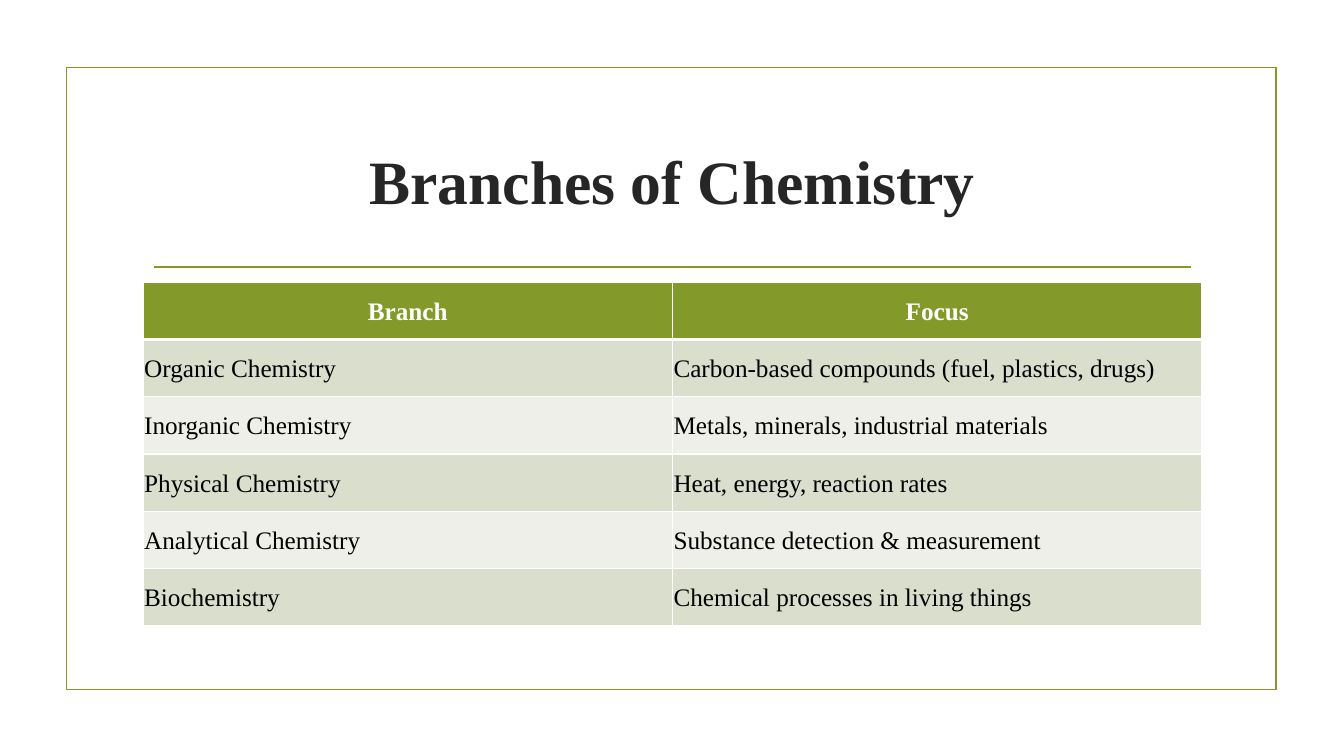
from lxml import etree
from pptx import Presentation
from pptx.dml.color import RGBColor
from pptx.enum.shapes import MSO_CONNECTOR, MSO_SHAPE
from pptx.enum.text import MSO_ANCHOR, PP_ALIGN
from pptx.oxml.ns import qn
from pptx.util import Inches, Pt

TITLE = "Branches of Chemistry"
BRANCHES = [
    ("Branch", "Focus"),
    ("Organic Chemistry", "Carbon-based compounds (fuel, plastics, drugs)"),
    ("Inorganic Chemistry", "Metals, minerals, industrial materials"),
    ("Physical Chemistry", "Heat, energy, reaction rates"),
    ("Analytical Chemistry", "Substance detection & measurement"),
    ("Biochemistry", "Chemical processes in living things"),
]
FONT = "Times New Roman"
GREEN, WHITE, BLACK, TITLE_GREY = "83992A", "FFFFFF", "000000", "262626"
BANDS = ("EDEFE8", "D9DECD")
LEFT, WIDTH = 1.42, 10.5
TABLE_TOP, TABLE_HEIGHT = 2.8, 3.41
CELL_MARGIN = Inches(0.01)


def rgb(hex_color):
    return RGBColor.from_string(hex_color)


def write(frame, text, size, color, bold, align):
    paragraph = frame.paragraphs[0]
    paragraph.alignment = align
    run = paragraph.add_run()
    run.text = text
    run.font.name = FONT
    run.font.size = Pt(size)
    run.font.bold = bold
    run.font.color.rgb = rgb(color)
    return paragraph


def outline(line):
    line.color.rgb = rgb(GREEN)
    line.width = Pt(1.25)


def add_borders(cell, widths):
    """Draw white cell borders; widths maps L, R, T, B (in that order) to points."""
    properties = cell._tc.get_or_add_tcPr()
    for side, width in widths.items():
        border = etree.SubElement(properties, qn(f"a:ln{side}"), w=str(Pt(width)))
        fill = etree.SubElement(border, qn("a:solidFill"))
        etree.SubElement(fill, qn("a:srgbClr"), val=WHITE)


prs = Presentation()
prs.slide_width, prs.slide_height = Inches(13.33), Inches(7.5)
slide = prs.slides.add_slide(prs.slide_layouts[6])
shapes = slide.shapes

frame = shapes.add_shape(MSO_SHAPE.RECTANGLE, Inches(0.66), Inches(0.67),
                         Inches(12), Inches(6.17))
frame.shadow.inherit = False
frame.fill.background()
outline(frame.line)

rule = shapes.add_connector(MSO_CONNECTOR.STRAIGHT, Inches(1.53), Inches(2.65),
                            Inches(11.81), Inches(2.65))
outline(rule.line)
etree.SubElement(rule._element.spPr, qn("a:effectLst"))

title = shapes.add_textbox(Inches(LEFT), Inches(1.07), Inches(WIDTH), Inches(1.43)).text_frame
title.word_wrap = True
title.vertical_anchor = MSO_ANCHOR.MIDDLE
write(title, TITLE, 44, TITLE_GREY, True, PP_ALIGN.CENTER)

table = shapes.add_table(len(BRANCHES), len(BRANCHES[0]), Inches(LEFT), Inches(TABLE_TOP),
                         Inches(WIDTH), Inches(TABLE_HEIGHT)).table
for r, entries in enumerate(BRANCHES):
    header = r == 0
    for c, entry in enumerate(entries):
        cell = table.cell(r, c)
        add_borders(cell, {"L": 1, "R": 1, "T": 3 if r == 1 else 1, "B": 3 if header else 1})
        cell.fill.solid()
        cell.fill.fore_color.rgb = rgb(GREEN if header else BANDS[r % 2])
        cell.margin_left = cell.margin_right = CELL_MARGIN
        cell.margin_top = cell.margin_bottom = CELL_MARGIN
        cell.vertical_anchor = MSO_ANCHOR.MIDDLE
        paragraph = write(cell.text_frame, entry, 18, WHITE if header else BLACK, header,
                          PP_ALIGN.CENTER if header else PP_ALIGN.LEFT)
        paragraph.line_spacing = 1.07

prs.save("out.pptx")
